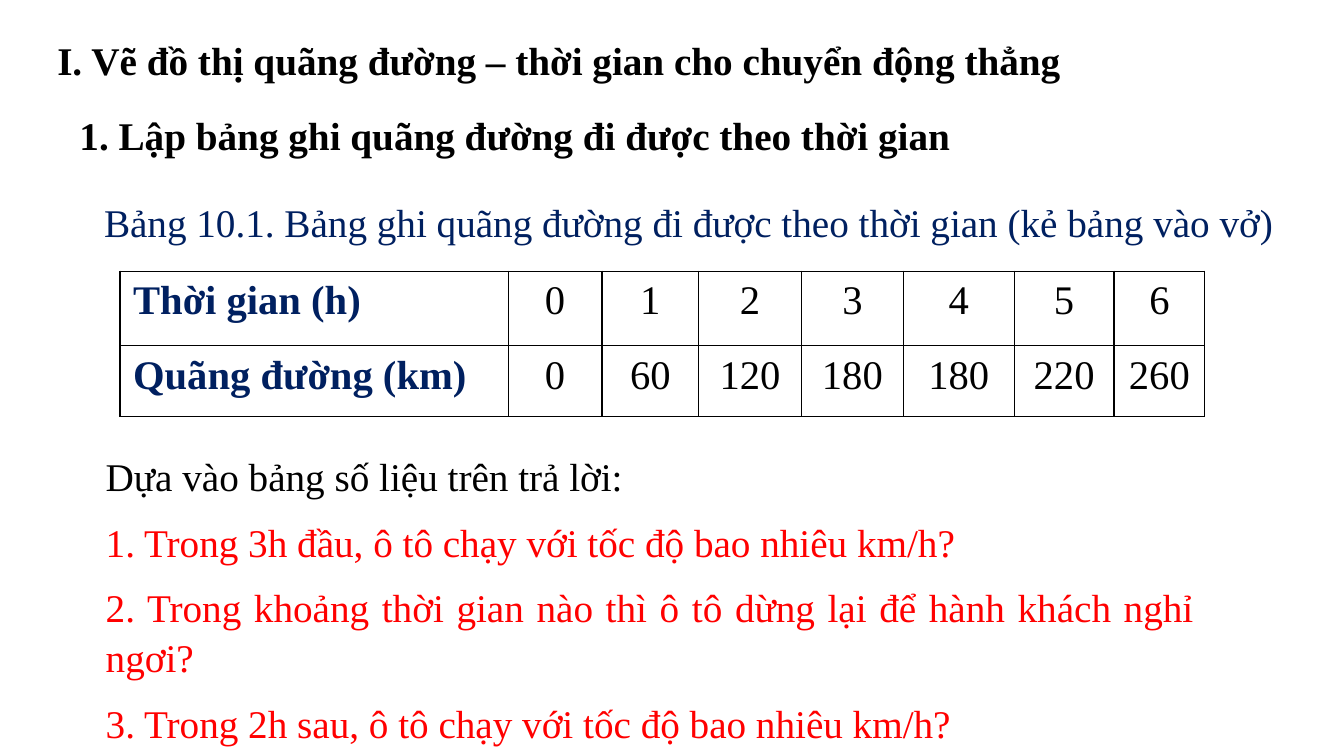
from dataclasses import dataclass

from lxml.etree import SubElement
from pptx import Presentation
from pptx.dml.color import RGBColor
from pptx.enum.text import MSO_AUTO_SIZE, PP_ALIGN
from pptx.oxml.ns import qn
from pptx.util import Inches, Pt


@dataclass(frozen=True)
class Theme:
    font: str = "Times New Roman"
    black: str = "000000"
    navy: str = "002060"
    red: str = "FF0000"
    white: str = "FFFFFF"
    body_size: int = 28
    table_size: int = 29
    border_width: int = 1


class SlideBuilder:
    def __init__(self, deck, theme):
        self.theme = theme
        self.page = deck.slides.add_slide(deck.slide_layouts[6])

    def add_span(self, para, text, size, color, bold=False):
        span = para.add_run()
        span.text = text
        span.font.name = self.theme.font
        span.font.size = Pt(size)
        span.font.bold = bold
        span.font.color.rgb = RGBColor.from_string(color)

    def add_text(self, place, lines, bold=False, align=PP_ALIGN.LEFT,
                 spacing=1.0, before=0, after=0):
        """Add a text box; lines holds (text, color) pairs, one per paragraph."""
        box = self.page.shapes.add_textbox(*map(Inches, place))
        frame = box.text_frame
        frame.word_wrap = True
        frame.auto_size = MSO_AUTO_SIZE.SHAPE_TO_FIT_TEXT
        for index, (text, color) in enumerate(lines):
            para = frame.add_paragraph() if index else frame.paragraphs[0]
            para.alignment = align
            para.line_spacing = spacing
            para.space_before = Pt(before)
            para.space_after = Pt(after)
            self.add_span(para, text, self.theme.body_size, color, bold)

    def add_table(self, place, widths, heights, rows):
        """Add a bordered table whose first column holds the row headings."""
        frame = self.page.shapes.add_table(len(rows), len(widths), *map(Inches, place))
        table = frame.table
        for column, width in zip(table.columns, widths):
            column.width = Inches(width)
        for row, height in zip(table.rows, heights):
            row.height = Inches(height)
        for row_index, values in enumerate(rows):
            for column_index, text in enumerate(values):
                self.fill_cell(table.cell(row_index, column_index), text, column_index == 0)

    def fill_cell(self, cell, text, heading):
        theme = self.theme
        cell.margin_left = cell.margin_right = Inches(0.13)
        cell.margin_top = cell.margin_bottom = Inches(0.07)
        self.add_borders(cell)
        cell.fill.solid()
        cell.fill.fore_color.rgb = RGBColor.from_string(theme.white)
        para = cell.text_frame.paragraphs[0]
        para.alignment = PP_ALIGN.LEFT if heading else PP_ALIGN.CENTER
        color = theme.navy if heading else theme.black
        self.add_span(para, text, theme.table_size, color, heading)

    def add_borders(self, cell):
        properties = cell._tc.get_or_add_tcPr()
        for side in ("a:lnL", "a:lnR", "a:lnT", "a:lnB"):
            line = SubElement(properties, qn(side), w=str(Pt(self.theme.border_width)))
            fill = SubElement(line, qn("a:solidFill"))
            SubElement(fill, qn("a:srgbClr"), val=self.theme.black)


def main():
    deck = Presentation()
    deck.slide_width = Inches(13.33)
    deck.slide_height = Inches(7.5)
    theme = Theme()
    slide = SlideBuilder(deck, theme)

    slide.add_text(
        (0.47, 0.31, 11.96, 0.57),
        [("I. Vẽ đồ thị quãng đường – thời gian cho chuyển động thẳng", theme.black)],
        bold=True)
    slide.add_text(
        (0.69, 1.11, 11.5, 0.53),
        [("1. Lập bảng ghi quãng đường đi được theo thời gian", theme.black)],
        bold=True, spacing=0.9, before=10)
    slide.add_text(
        (0.71, 1.89, 12.24, 0.6),
        [("Bảng 10.1. Bảng ghi quãng đường đi được theo thời gian (kẻ bảng vào vở)",
          theme.navy)],
        align=PP_ALIGN.CENTER, spacing=1.07, after=10.7)
    slide.add_table(
        (1.19, 2.69, 10.76, 1.44),
        widths=(3.85, 0.93, 0.96, 1.02, 1.01, 1.1, 0.99, 0.9),
        heights=(0.74, 0.7),
        rows=(("Thời gian (h)", "0", "1", "2", "3", "4", "5", "6"),
              ("Quãng đường (km)", "0", "60", "120", "180", "180", "220", "260")))
    slide.add_text(
        (0.95, 4.41, 10.99, 3.05),
        [("Dựa vào bảng số liệu trên trả lời:", theme.black),
         ("1. Trong 3h đầu, ô tô chạy với tốc độ bao nhiêu km/h?", theme.red),
         ("2. Trong khoảng thời gian nào thì ô tô dừng lại để hành khách nghỉ ngơi?",
          theme.red),
         ("3. Trong 2h sau, ô tô chạy với tốc độ bao nhiêu km/h?", theme.red)],
        align=PP_ALIGN.JUSTIFY, spacing=1.07, after=10.7)

    deck.save("out.pptx")


if __name__ == "__main__":
    main()
